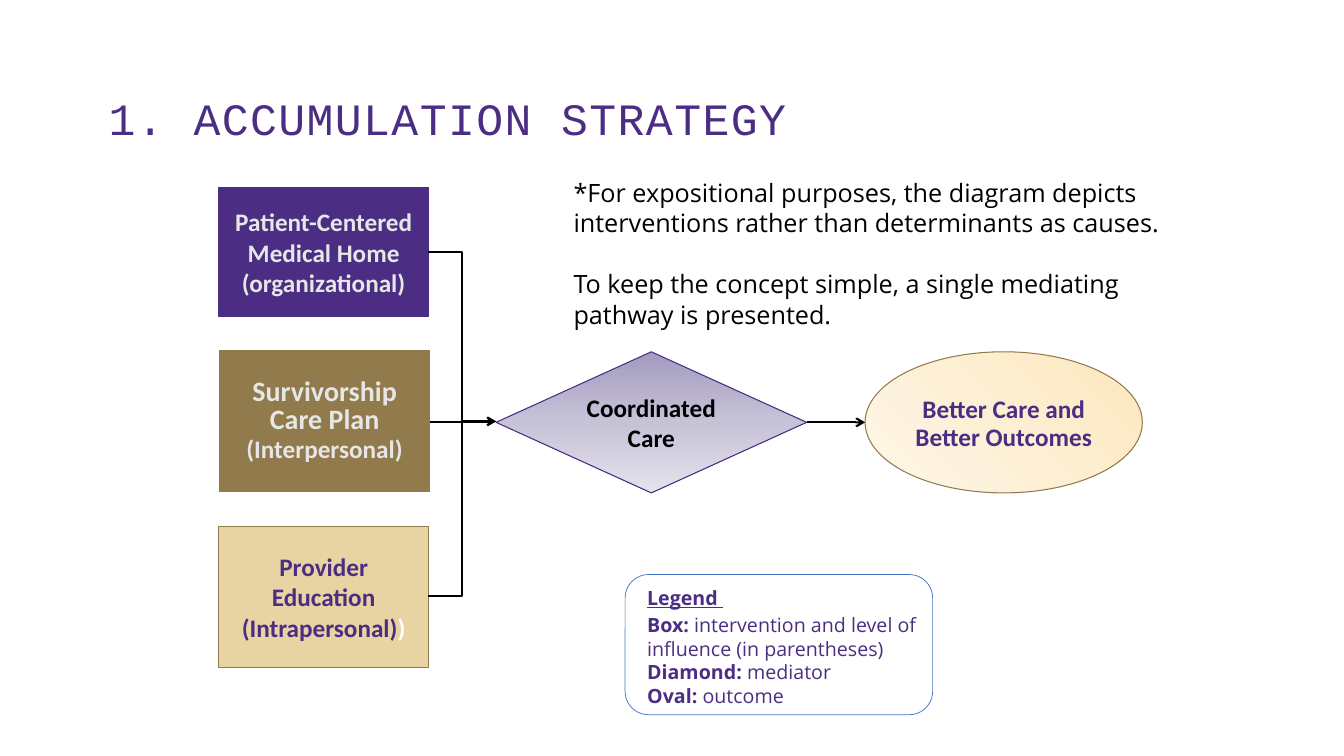
from dataclasses import dataclass
from typing import Optional

from lxml import etree
from pptx import Presentation
from pptx import util as u
from pptx.dml.color import RGBColor
from pptx.enum import shapes, text
from pptx.oxml import ns

COLORS = {
    "purple": "4B2E83", "bronze": "917B4C", "sand": "E8D3A2", "gray": "E7E6E6",
    "black": "000000", "white": "FFFFFF", "blue": "4472C4",
}
MEDIATOR_STOPS = ("A39BC1", "C7C3D7", "E4E2EB")
OUTCOME_STOPS = ("FCE7BC", "FDEFD4", "FEF7EA")
MEDIATOR_SHADE = '<a:lin ang="5400000" scaled="0"/>'
OUTCOME_SHADE = '<a:path path="circle"><a:fillToRect l="100000" b="100000"/></a:path>'


@dataclass
class Words:
    text: str
    size: float = 18
    color: str = "black"
    bold: bool = False
    font: str = "Calibri"
    underline: bool = False


@dataclass
class Line:
    words: list[Words]
    before: float = 0
    spacing: Optional[float | u.Pt] = None
    align: Optional[text.PP_ALIGN] = None


@dataclass
class Node:
    kind: shapes.MSO_SHAPE
    area: tuple[float, float, float, float]
    line: str
    fill: Optional[str] = None
    lines: tuple[Line, ...] = ()
    weight: float = 0.75


@dataclass
class Link:
    kind: shapes.MSO_CONNECTOR
    start: tuple[float, float]
    end: tuple[float, float]
    head: Optional[str] = "arrow"


def rgb(name: str) -> RGBColor:
    return RGBColor.from_string(COLORS[name])


def write(frame, lines, anchor=text.MSO_ANCHOR.TOP) -> None:
    frame.word_wrap = True
    frame.vertical_anchor = anchor
    for index, line in enumerate(lines):
        paragraph = frame.add_paragraph() if index else frame.paragraphs[0]
        if line.before:
            paragraph.space_before = u.Pt(line.before)
        if line.spacing:
            paragraph.line_spacing = line.spacing
        paragraph.alignment = line.align
        for words in line.words:
            run = paragraph.add_run()
            run.text = words.text
            run.font.name = words.font
            run.font.size = u.Pt(words.size)
            run.font.bold = words.bold
            run.font.underline = words.underline
            run.font.color.rgb = rgb(words.color)


def add_text(slide, area, lines, anchor=text.MSO_ANCHOR.TOP):
    box = slide.shapes.add_textbox(*map(u.Inches, area))
    write(box.text_frame, lines, anchor)
    return box


def add_node(slide, node: Node):
    shape = slide.shapes.add_shape(node.kind, *map(u.Inches, node.area))
    shape.shadow.inherit = False
    if node.fill:
        shape.fill.solid()
        shape.fill.fore_color.rgb = rgb(node.fill)
    else:
        shape.fill.background()
    shape.line.color.rgb = rgb(node.line)
    shape.line.width = u.Pt(node.weight)
    write(shape.text_frame, node.lines, text.MSO_ANCHOR.MIDDLE)
    return shape


def shade(shape, stops: tuple[str, ...], direction: str) -> None:
    """Replace the empty fill with evenly spaced gradient stops."""
    step = 100000 // (len(stops) - 1)
    marks = "".join(f'<a:gs pos="{i * step}"><a:srgbClr val="{stop}"/></a:gs>'
                    for i, stop in enumerate(stops))
    gradient = etree.fromstring(
        f'<a:gradFill {ns.nsdecls("a")} rotWithShape="1">'
        f'<a:gsLst>{marks}</a:gsLst>{direction}</a:gradFill>')
    properties = shape._element.spPr
    properties.replace(properties.find(ns.qn("a:noFill")), gradient)


def add_link(slide, link: Link) -> None:
    connector = slide.shapes.add_connector(
        link.kind, *map(u.Inches, link.start + link.end))
    connector.line.color.rgb = rgb("black")
    connector.line.width = u.Pt(1.5)
    if link.head:
        etree.SubElement(connector.line._get_or_add_ln(), ns.qn("a:tailEnd"), type=link.head)
    etree.SubElement(connector._element.spPr, ns.qn("a:effectLst"))


def centered(*words: Words, spacing=None) -> Line:
    return Line(list(words), spacing=spacing, align=text.PP_ALIGN.CENTER)


def label(content: str, color: str, size: float = 18) -> Words:
    return Words(content, size, color, bold=True)


def legend_line(term: str, meaning: str, before: float = 0) -> Line:
    return Line([Words(term, 14, "purple", True, "Open Sans"),
                 Words(meaning, 14, "purple", False, "Open Sans")], before)


SHAPE, ELBOW = shapes.MSO_SHAPE, shapes.MSO_CONNECTOR.ELBOW
TIGHT = u.Pt(20)

INTERVENTIONS = [
    Node(SHAPE.RECTANGLE, (2.17, 1.86, 2.08, 1.28), "purple", "purple", (
        centered(label("Patient-Centered Medical Home", "gray")),
        centered(label("(organizational)", "gray")))),
    Node(SHAPE.RECTANGLE, (2.18, 3.48, 2.08, 1.4), "bronze", "bronze", (
        centered(label("Survivorship Care Plan", "gray", 20), spacing=TIGHT),
        centered(label("(Interpersonal)", "gray"), spacing=TIGHT))),
    Node(SHAPE.RECTANGLE, (2.17, 5.22, 2.08, 1.4), "bronze", "sand", (
        centered(label("Provider Education", "purple")),
        centered(label("(Intrapersonal)", "purple"), label(")", "white")))),
]
MEDIATOR = Node(SHAPE.DIAMOND, (4.92, 3.49, 3.08, 1.4), "purple",
                lines=(centered(label("Coordinated Care", "black")),))
OUTCOME = Node(SHAPE.OVAL, (8.58, 3.49, 2.75, 1.4), "bronze")
LEGEND = Node(SHAPE.ROUNDED_RECTANGLE, (6.2, 5.7, 3.05, 1.39), "blue", weight=0.5)
LINKS = [
    Link(ELBOW, (4.25, 5.91), (4.92, 4.18), "triangle"),
    Link(ELBOW, (4.25, 2.5), (4.92, 4.18)),
    Link(ELBOW, (8, 4.19), (8.58, 4.19)),
    Link(shapes.MSO_CONNECTOR.STRAIGHT, (4.26, 4.19), (4.85, 4.19), None),
]


def main() -> None:
    deck = Presentation()
    deck.slide_width, deck.slide_height = u.Inches(13.33), u.Inches(7.5)
    slide = deck.slides.add_slide(deck.slide_layouts[6])

    # Title
    title = add_text(slide, (0.98, 0.41, 11.93, 1.08), [
        Line([Words("1. ACCUMULATION STRATEGY", 32, "purple", font="Courier New")],
             spacing=0.9)], text.MSO_ANCHOR.BOTTOM)
    title.text_frame.paragraphs[0].runs[0].font._element.set("spc", "100")

    # Legend
    add_node(slide, LEGEND)
    add_text(slide, (6.32, 5.76, 3.08, 1.07), [
        Line([Words("Legend ", 14, "purple", True, "Open Sans", True)]),
        legend_line("Box: ", "intervention and level of influence (in parentheses)", 3),
        legend_line("Diamond: ", "mediator"),
        legend_line("Oval: ", "outcome")])

    # Causal diagram
    shade(add_node(slide, OUTCOME), OUTCOME_STOPS, OUTCOME_SHADE)
    for intervention in INTERVENTIONS:
        add_node(slide, intervention)
    shade(add_node(slide, MEDIATOR), MEDIATOR_STOPS, MEDIATOR_SHADE)
    for link in LINKS:
        add_link(slide, link)
    add_text(slide, (8.87, 3.87, 2.17, 0.77), [
        centered(label("Better Care and Better Outcomes", "purple"), spacing=TIGHT)])

    # Explanatory note
    add_text(slide, (5.59, 1.71, 6.06, 1.31), [
        Line([Words("*For expositional purposes, the diagram depicts interventions "
                    "rather than determinants as causes.", font="Open Sans")]),
        Line([Words("To keep the concept simple, a single mediating pathway is presented.",
                    font="Open Sans")], before=22)])

    deck.save("out.pptx")


if __name__ == "__main__":
    main()
